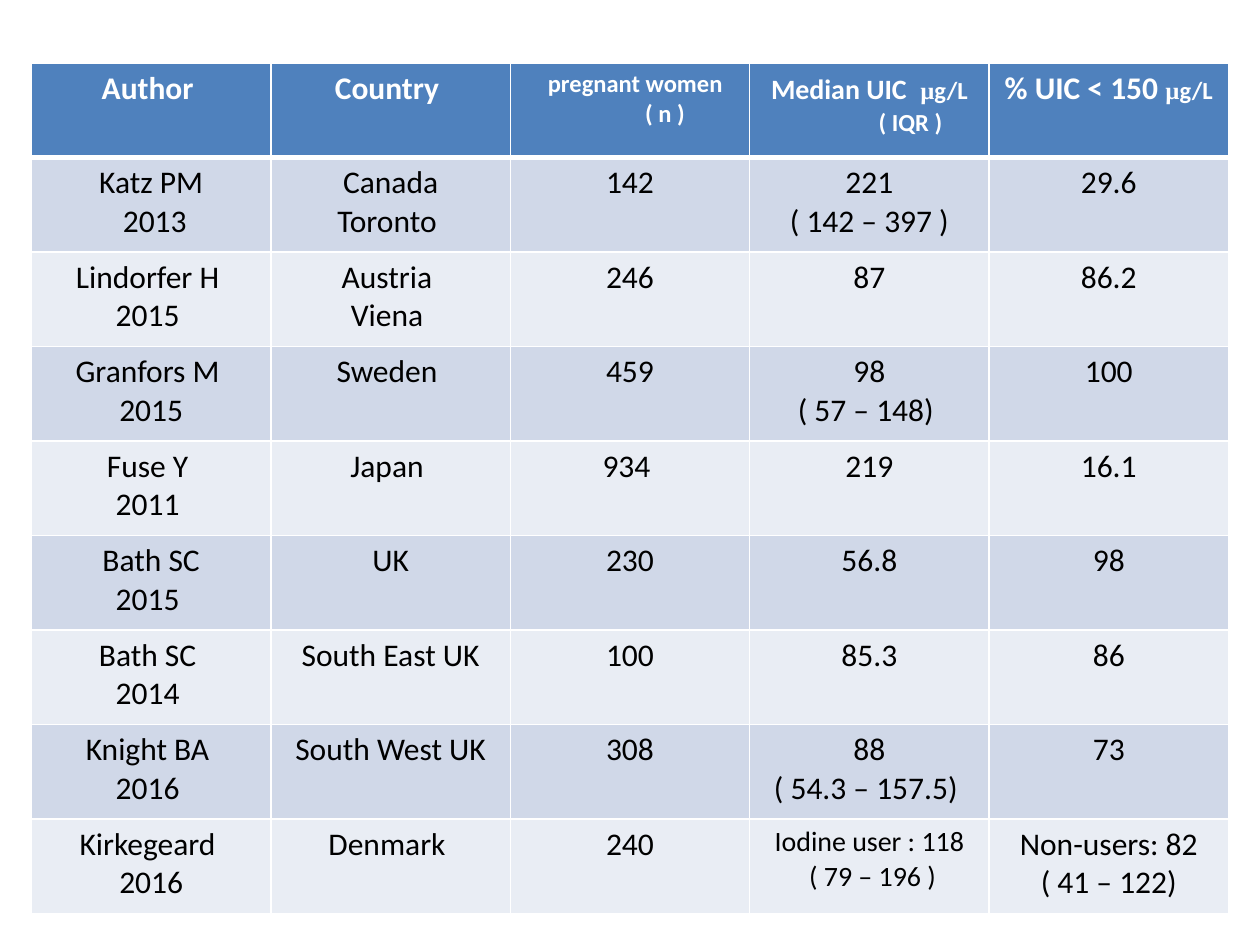
from dataclasses import dataclass

from lxml import etree
from pptx import Presentation
from pptx import util as u
from pptx.dml.color import RGBColor
from pptx.enum import text
from pptx.oxml.ns import qn

WHITE = RGBColor(0xFF, 0xFF, 0xFF)
BLACK = RGBColor(0x00, 0x00, 0x00)
HEADER_BLUE = RGBColor(0x4F, 0x81, 0xBD)
BANDS = (RGBColor(0xD0, 0xD8, 0xE8), RGBColor(0xE9, 0xED, 0xF4))

SLIDE_W, SLIDE_H = u.Inches(10), u.Inches(7.5)
COL_W = round(SLIDE_W * 0.19)
ROW_H = round(SLIDE_H * 0.1)


@dataclass(frozen=True)
class Run:
    text: str
    size: float = 18
    font: str = "Calibri"


@dataclass(frozen=True)
class Line:
    runs: tuple[Run, ...]
    indent: float = 0  # points


def line(words: str, size: float = 18, indent: float = 0) -> Line:
    return Line((Run(words, size),), indent)


MICROGRAM = (Run("µ", 14, "Times New Roman"), Run("g/L", 14))

HEADER = (
    (line("Author "),),
    (line("Country "),),
    (line("pregnant women", 14, 6), line("( n )", 14, 40)),
    (Line((Run("Median UIC ", 16), Run(" ")) + MICROGRAM), line("( IQR )", 14, 47)),
    (Line((Run("% UIC < 150 "),) + MICROGRAM),),
)

# A line feed separates the paragraphs of a cell.
STUDIES = (
    ("Katz PM\n 2013", "Canada\nToronto ", "142", "221\n( 142 – 397 )", "29.6"),
    ("Lindorfer H \n2015 ", "Austria \nViena ", "246", "87", "86.2"),
    ("Granfors M \n2015", "Sweden ", "459", "98\n( 57 – 148) ", "100"),
    ("Fuse Y \n2011 ", "Japan ", "934 ", "219", "16.1"),
    ("Bath SC\n2015 ", "UK", "230", "56.8", "98"),
    ("Bath SC \n2014 ", "South East UK", "100", "85.3", "86"),
    ("Knight BA \n2016 ", "South West UK", "308", "88\n( 54.3 – 157.5) ", "73"),
    ("Kirkegeard \n2016", "Denmark ", "240",
     "Iodine user : 118\n ( 79 – 196 )", "Non-users: 82\n( 41 – 122)"),
)
SMALL_CELL = (len(STUDIES), 3)


def set_borders(cell, top: float, bottom: float) -> None:
    """Draw white borders, one point wide at the sides."""
    tc_pr = cell._tc.get_or_add_tcPr()
    widths = {"a:lnL": 1, "a:lnR": 1, "a:lnT": top, "a:lnB": bottom}
    for i, (tag, width) in enumerate(widths.items()):
        ln = etree.Element(qn(tag), w=str(u.Pt(width)))
        fill = etree.SubElement(ln, qn("a:solidFill"))
        etree.SubElement(fill, qn("a:srgbClr"), val=str(WHITE))
        tc_pr.insert(i, ln)


def fill_cell(cell, lines: tuple[Line, ...], fill: RGBColor,
              color: RGBColor, bold: bool) -> None:
    cell.fill.solid()
    cell.fill.fore_color.rgb = fill
    tf = cell.text_frame
    for i, item in enumerate(lines):
        p = tf.add_paragraph() if i else tf.paragraphs[0]
        p.alignment = text.PP_ALIGN.CENTER
        if item.indent:
            p._p.get_or_add_pPr().set("marL", str(u.Pt(item.indent)))
        for run in item.runs:
            r = p.add_run()
            r.text = run.text
            r.font.name = run.font
            r.font.size = u.Pt(run.size)
            r.font.bold = bold
            r.font.color.rgb = color


def add_study_table(slide) -> None:
    rows, cols = len(STUDIES) + 1, len(HEADER)
    width, height = COL_W * cols, ROW_H * rows
    table = slide.shapes.add_table(
        rows, cols, (SLIDE_W - width) // 2, u.Inches(0.5), width, height).table

    for col, lines in enumerate(HEADER):
        cell = table.cell(0, col)
        fill_cell(cell, lines, HEADER_BLUE, WHITE, True)
        set_borders(cell, 1, 3)

    for row, study in enumerate(STUDIES, 1):
        for col, words in enumerate(study):
            size = 16 if (row, col) == SMALL_CELL else 18
            lines = tuple(line(part, size) for part in words.split("\n"))
            cell = table.cell(row, col)
            fill_cell(cell, lines, BANDS[(row - 1) % 2], BLACK, False)
            set_borders(cell, 3 if row == 1 else 1, 1)


def main() -> None:
    prs = Presentation()
    prs.slide_width, prs.slide_height = SLIDE_W, SLIDE_H
    slide = prs.slides.add_slide(prs.slide_layouts[6])
    add_study_table(slide)
    prs.save("out.pptx")


if __name__ == "__main__":
    main()
